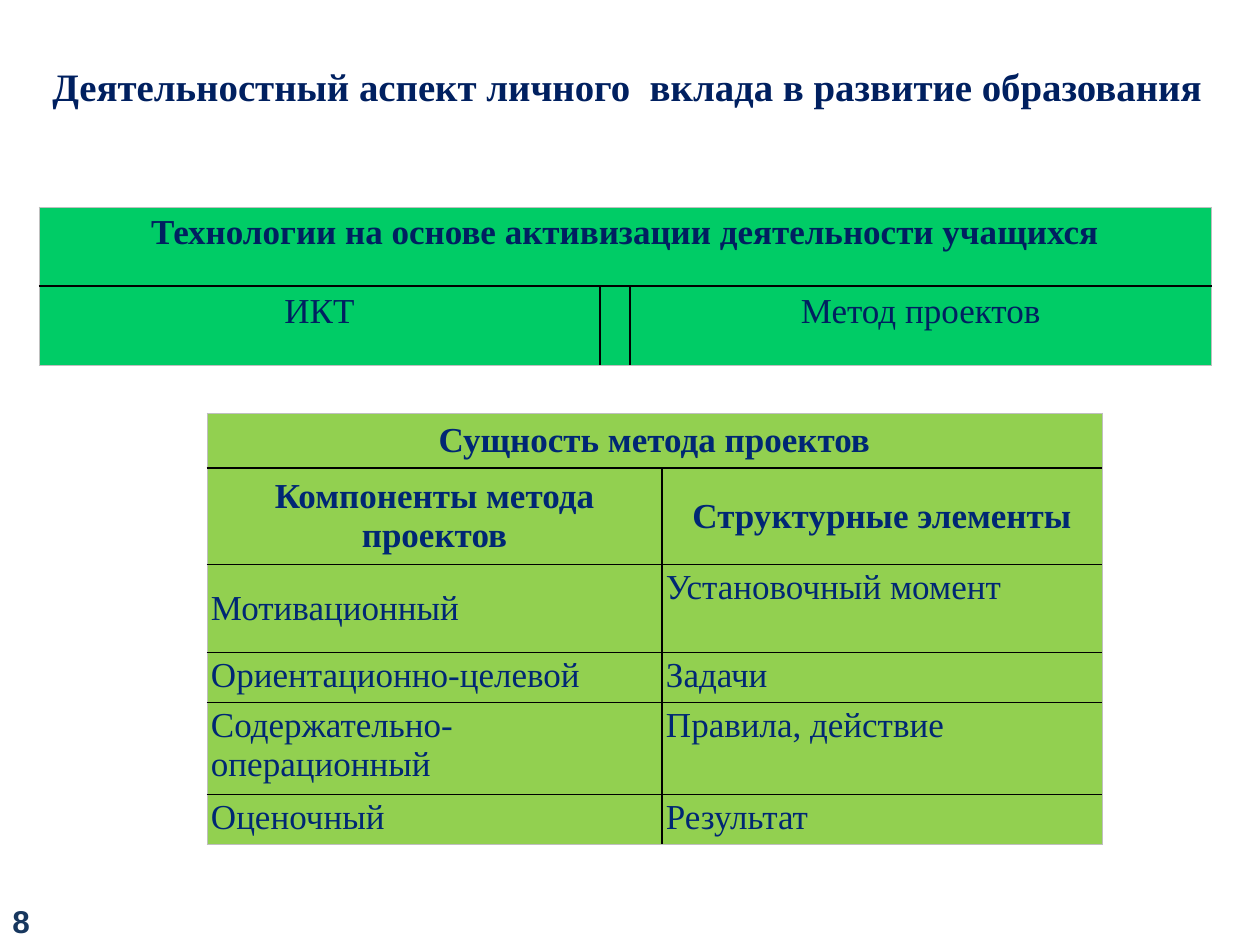
from dataclasses import dataclass

import pptx
import pptx.dml.color
import pptx.enum.text
import pptx.oxml
import pptx.oxml.ns
import pptx.util

PX_PER_INCH = 126
ALIGN = pptx.enum.text.PP_ALIGN
ANCHOR = pptx.enum.text.MSO_ANCHOR
INNER_LINE, OUTER_LINE = ("000000", 1), ("BFBFBF", 0.5)


@dataclass
class Style:
    size: float
    color: str
    bold: bool = False
    font: str = "Times New Roman"
    align: ALIGN = ALIGN.CENTER


@dataclass
class Cell:
    text: str
    style: Style
    anchor: ANCHOR = ANCHOR.TOP
    inset: int | None = None


@dataclass
class Grid:
    left: int
    top: int
    columns: list[int]
    rows: list[int]
    fill: str
    cells: list[list[Cell]]  # a row with one cell spans all columns


def px(length: int) -> int:
    return round(length * 914400 / PX_PER_INCH)


def rgb(color: str) -> pptx.dml.color.RGBColor:
    return pptx.dml.color.RGBColor.from_string(color)


def write(frame, text: str, style: Style) -> None:
    paragraph = frame.paragraphs[0]
    paragraph.alignment = style.align
    paragraph.text = text
    font = paragraph.font if not text else paragraph.runs[0].font
    values = {"size": pptx.util.Pt(style.size), "bold": style.bold, "name": style.font}
    for name, value in values.items():
        setattr(font, name, value)
    font.color.rgb = rgb(style.color)


def add_text(slide, box: tuple[int, int, int, int], text: str, style: Style,
             anchor: ANCHOR) -> None:
    frame = slide.shapes.add_textbox(*map(px, box)).text_frame
    frame.word_wrap = True
    frame.vertical_anchor = anchor
    write(frame, text, style)


def set_border(cell, side: str, line: tuple[str, float]) -> None:
    color, width = line
    border = pptx.oxml.parse_xml(
        f'<a:ln{side} {pptx.oxml.ns.nsdecls("a")} w="{pptx.util.Pt(width)}">'
        f'<a:solidFill><a:srgbClr val="{color}"/></a:solidFill></a:ln{side}>')
    cell._tc.get_or_add_tcPr().append(border)


def add_grid(slide, grid: Grid) -> None:
    last_row, last_column = len(grid.rows) - 1, len(grid.columns) - 1
    table = slide.shapes.add_table(
        last_row + 1, last_column + 1, px(grid.left), px(grid.top),
        px(sum(grid.columns)), px(sum(grid.rows))).table
    table.first_row = table.horz_banding = False
    for column, width in zip(table.columns, grid.columns):
        column.width = px(width)
    for row, height in zip(table.rows, grid.rows):
        row.height = px(height)

    for r, contents in enumerate(grid.cells):
        spanning = len(contents) == 1
        if spanning:
            table.cell(r, 0).merge(table.cell(r, last_column))
        for c in range(last_column + 1):
            cell = table.cell(r, c)
            # Borders come before the fill in the cell properties
            edges = {"L": c == 0, "R": spanning or c == last_column,
                     "T": r == 0, "B": r == last_row}
            for side, outer in edges.items():
                if not (spanning and c > 0 and side == "L"):
                    set_border(cell, side, OUTER_LINE if outer else INNER_LINE)
            cell.fill.solid()
            cell.fill.fore_color.rgb = rgb(grid.fill)
            if c < len(contents):
                content = contents[c]
                cell.vertical_anchor = content.anchor
                if content.inset is not None:
                    for side in ("left", "right", "top", "bottom"):
                        setattr(cell, f"margin_{side}", px(content.inset))
                write(cell.text_frame, content.text, content.style)


TITLE = Style(22.2, "002060", bold=True)
NUMBER = Style(18, "17375E", bold=True, font="Arial", align=ALIGN.LEFT)
TECHNOLOGY_HEAD = Style(20, "002060", bold=True)
TECHNOLOGY = Style(20, "002060")
METHOD_HEAD = Style(20, "002774", bold=True)
METHOD = Style(20, "002774", align=ALIGN.LEFT)


def head(text: str) -> Cell:
    return Cell(text, METHOD_HEAD, ANCHOR.MIDDLE)


def entry(text: str, anchor: ANCHOR = ANCHOR.TOP) -> Cell:
    return Cell(text, METHOD, anchor, inset=4)


TECHNOLOGIES = Grid(39, 207, [561, 30, 581], [79, 79], "00CC66", [
    [Cell("Технологии на основе активизации деятельности учащихся", TECHNOLOGY_HEAD)],
    [Cell(text, TECHNOLOGY) for text in ("ИКТ", "", "Метод проектов")],
])
PROJECT_METHOD = Grid(207, 413, [455, 440], [55, 94, 88, 49, 88, 49], "92D050", [
    [head("Сущность метода проектов")],
    [head("Компоненты метода проектов"), head("Структурные элементы")],
    [entry("Мотивационный", ANCHOR.MIDDLE), entry("Установочный момент")],
    [entry("Ориентационно-целевой"), entry("Задачи")],
    [entry("Содержательно-операционный"), entry("Правила, действие")],
    [entry("Оценочный"), entry("Результат")],
])


def main() -> None:
    presentation = pptx.Presentation()
    presentation.slide_width, presentation.slide_height = px(1260), px(945)
    slide = presentation.slides.add_slide(presentation.slide_layouts[6])

    # Title
    add_text(slide, (29, 0, 1197, 116),
             "Деятельностный аспект личного  вклада в развитие образования",
             TITLE, ANCHOR.BOTTOM)
    # Tables
    for grid in (TECHNOLOGIES, PROJECT_METHOD):
        add_grid(slide, grid)
    # Slide number
    add_text(slide, (0, 896, 59, 50), "8", NUMBER, ANCHOR.TOP)

    presentation.save("out.pptx")


if __name__ == "__main__":
    main()
